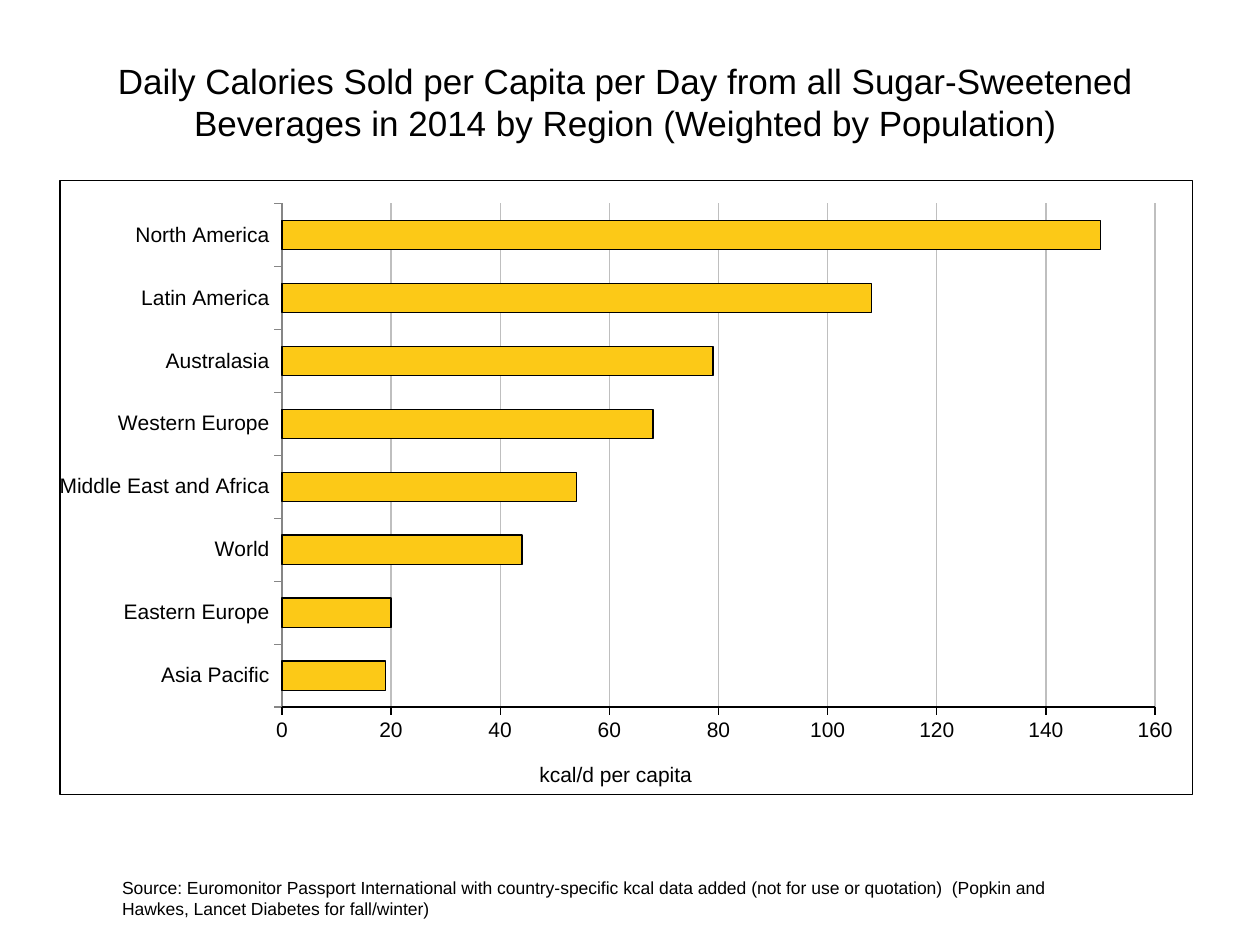
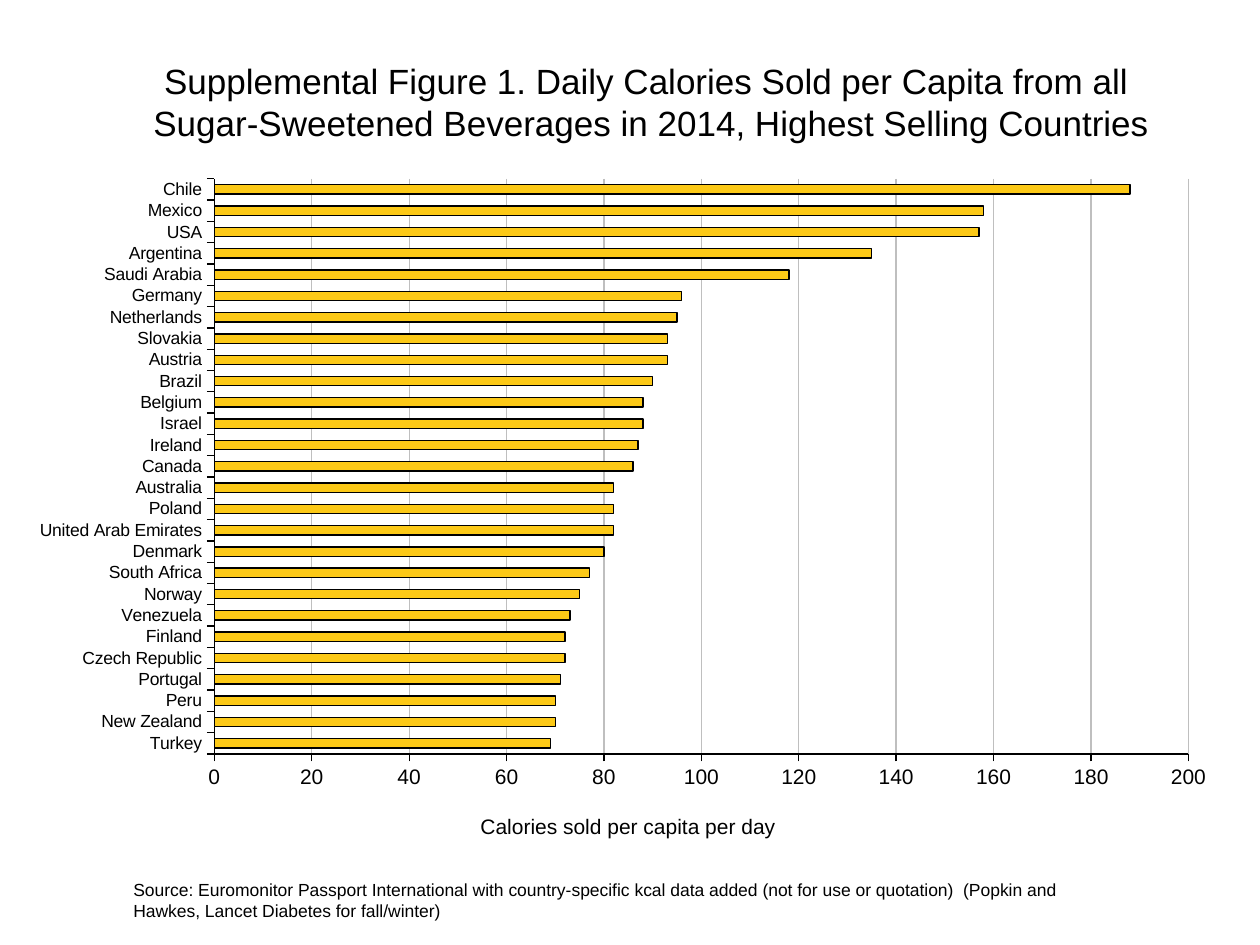
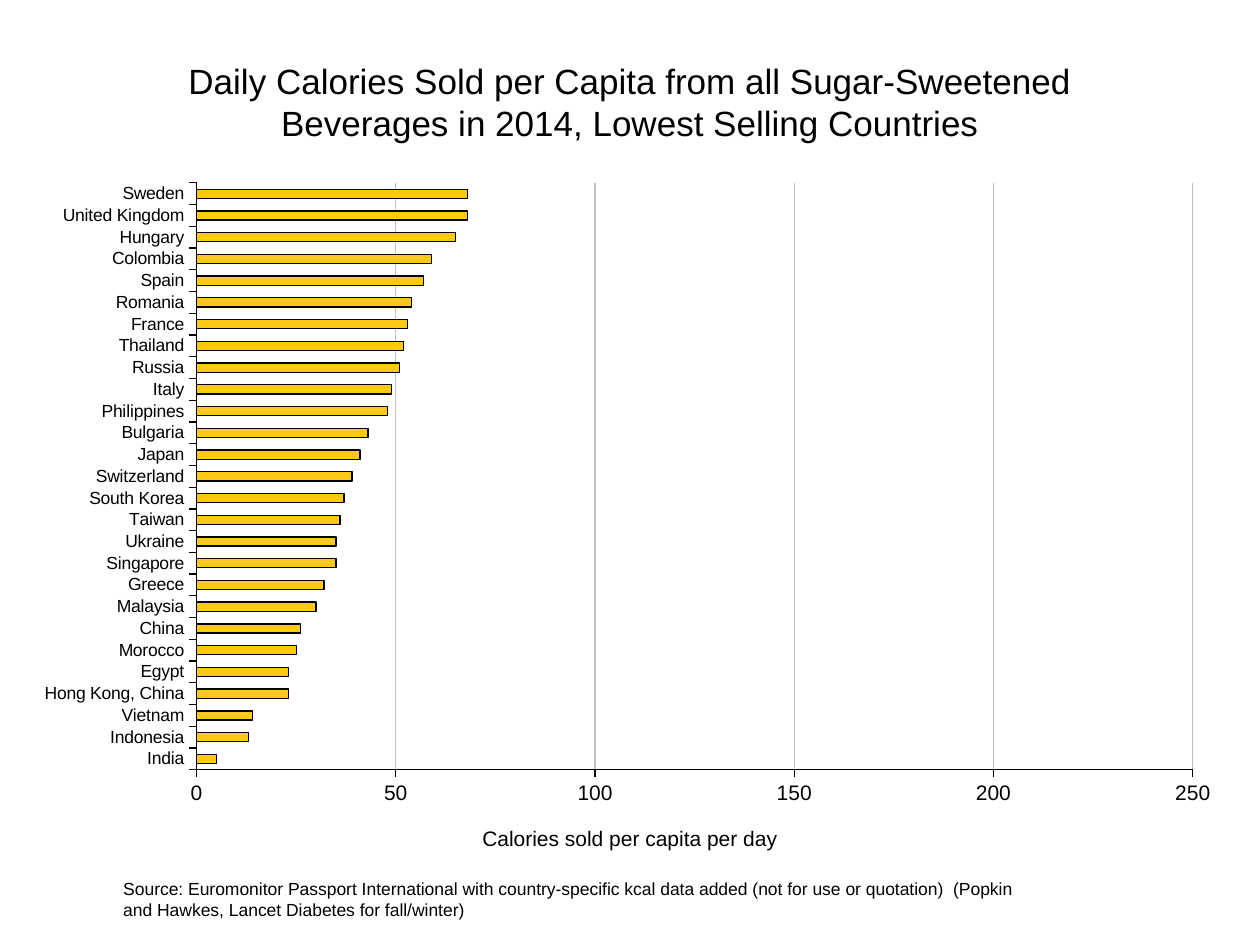
from lxml import etree
from pptx import Presentation
from pptx.chart.data import CategoryChartData
from pptx.dml.color import RGBColor
from pptx.enum.chart import XL_CHART_TYPE, XL_TICK_MARK
from pptx.enum.text import MSO_ANCHOR, MSO_AUTO_SIZE, PP_ALIGN
from pptx.oxml import parse_xml
from pptx.oxml.ns import nsdecls, qn
from pptx.util import Inches, Pt

CLUSTERED, STACKED = XL_CHART_TYPE.BAR_CLUSTERED, XL_CHART_TYPE.BAR_STACKED
TICK_OUT, TICK_NONE = XL_TICK_MARK.OUTSIDE, XL_TICK_MARK.NONE
TOP, FIT = MSO_ANCHOR.TOP, MSO_AUTO_SIZE.SHAPE_TO_FIT_TEXT
LEFT, CENTER = PP_ALIGN.LEFT, PP_ALIGN.CENTER

BLACK, GRAY, GRID, GOLD = "000000", "868686", "BFBFBF", "FCC917"
FONT = "Arial"
LINE_WIDTH = Pt(0.75)
SOURCE = (
    "Source: Euromonitor Passport International with country-specific kcal data added "
    "(not for use or quotation)  (Popkin and Hawkes, Lancet Diabetes for fall/winter)"
)

REGIONS = {
    "Asia Pacific": 19, "Eastern Europe": 20, "World": 44, "Middle East and Africa": 54,
    "Western Europe": 68, "Australasia": 79, "Latin America": 108, "North America": 150,
}
HIGHEST = {
    "Turkey": 69, "New Zealand": 70, "Peru": 70, "Portugal": 71, "Czech Republic": 72,
    "Finland": 72, "Venezuela": 73, "Norway": 75, "South Africa": 77, "Denmark": 80,
    "United Arab Emirates": 82, "Poland": 82, "Australia": 82, "Canada": 86, "Ireland": 87,
    "Israel": 88, "Belgium": 88, "Brazil": 90, "Austria": 93, "Slovakia": 93,
    "Netherlands": 95, "Germany": 96, "Saudi Arabia": 118, "Argentina": 135, "USA": 157,
    "Mexico": 158, "Chile": 188,
}
LOWEST = {
    "India": 5, "Indonesia": 13, "Vietnam": 14, "Hong Kong, China": 23, "Egypt": 23,
    "Morocco": 25, "China": 26, "Malaysia": 30, "Greece": 32, "Singapore": 35,
    "Ukraine": 35, "Taiwan": 36, "South Korea": 37, "Switzerland": 39, "Japan": 41,
    "Bulgaria": 43, "Philippines": 48, "Italy": 49, "Russia": 51, "Thailand": 52,
    "France": 53, "Romania": 54, "Spain": 57, "Colombia": 59, "Hungary": 65,
    "United Kingdom": 68, "Sweden": 68,
}

SLIDES = [
    {
        "title": "Daily Calories Sold per Capita per Day from all Sugar-Sweetened "
                 "Beverages in 2014 by Region (Weighted by Population)",
        "title_at": (0.62, 0.42, 8.69, 0.77), "source_at": (0.87, 6.91, 7.92, 0.44),
        "chart_at": (0.47, 1.43, 9, 4.88), "type": CLUSTERED, "data": REGIONS,
        "gap": 116, "overlap": 0, "max": 160, "step": 20, "format": "#,##0",
        "axis_title": "kcal/d per capita", "axis_title_at": (0.42, 0.94),
        "plot_at": (0.196, 0.037, 0.771, 0.821),
        "label_size": 12, "axis_color": GRAY, "border": True,
    },
    {
        "title": "Supplemental Figure 1. Daily Calories Sold per Capita from all \v"
                 "Sugar-Sweetened Beverages in 2014, Highest Selling Countries",
        "title_at": (1.11, 0.42, 8.12, 0.77), "source_at": (0.96, 6.93, 7.84, 0.44),
        "chart_at": (0.12, 1.31, 9.64, 5.5), "type": STACKED, "data": HIGHEST,
        "gap": 128, "overlap": 100, "max": 200, "step": 20, "format": "0",
        "axis_title": "Calories sold per capita per day", "axis_title_at": (0.38, 0.93),
        "plot_at": (0.164, 0.02, 0.802, 0.83),
        "label_size": 10, "axis_color": BLACK, "border": False,
    },
    {
        "title": "Daily Calories Sold per Capita from all Sugar-Sweetened "
                 "Beverages in 2014, Lowest Selling Countries",
        "title_at": (1.11, 0.42, 7.78, 0.77), "source_at": (0.88, 6.92, 7.33, 0.44),
        "chart_at": (0.29, 1.3, 9.48, 5.62), "type": STACKED, "data": LOWEST,
        "gap": 138, "overlap": 100, "max": 250, "step": 50, "format": "0",
        "axis_title": "Calories sold per capita per day", "axis_title_at": (0.37, 0.93),
        "plot_at": (0.134, 0.027, 0.834, 0.829),
        "label_size": 10, "axis_color": BLACK, "border": False,
    },
]


def color(hex_value):
    return RGBColor.from_string(hex_value)


def set_layout(parent, index, values):
    for old in parent.findall(qn("c:layout")):
        parent.remove(old)
    layout = parse_xml(f"<c:layout {nsdecls('c')}><c:manualLayout/></c:layout>")
    fields = {"xMode": "edge", "yMode": "edge"} | dict(zip("xywh", values))
    if len(values) == 4:
        fields = {"layoutTarget": "inner"} | fields
    for name, value in fields.items():
        etree.SubElement(layout[0], qn(f"c:{name}")).set("val", str(value))
    parent.insert(index, layout)


deck = Presentation()
deck.slide_width, deck.slide_height = Inches(10), Inches(7.5)

for spec_values in SLIDES:
    page = deck.slides.add_slide(deck.slide_layouts[5])

    data = CategoryChartData()
    data.categories = list(spec_values["data"])
    data.add_series("Series 1", list(spec_values["data"].values()))
    place = [Inches(length) for length in spec_values["chart_at"]]
    chart = page.shapes.add_chart(spec_values["type"], *place, data).chart
    chart.has_legend = chart.has_title = False

    value_axis, category_axis = chart.value_axis, chart.category_axis
    value_axis.minimum_scale = 0
    value_axis.maximum_scale = spec_values["max"]
    value_axis.major_unit = spec_values["step"]
    value_axis.has_major_gridlines = True
    value_axis.tick_labels.number_format = spec_values["format"]
    value_axis.tick_labels.number_format_is_linked = False
    for axis in (value_axis, category_axis):
        axis.major_tick_mark, axis.minor_tick_mark = TICK_OUT, TICK_NONE

    axis_title = value_axis.axis_title
    axis_title.text_frame.text = spec_values["axis_title"]
    title_span = axis_title.text_frame.paragraphs[0].runs[0]
    fonts = [
        (chart.font, 10),
        (value_axis.tick_labels.font, 12),
        (category_axis.tick_labels.font, spec_values["label_size"]),
        (title_span.font, 12),
    ]
    for font, size in fonts:
        for name, value in {"name": FONT, "size": Pt(size), "bold": False}.items():
            setattr(font, name, value)
        font.color.rgb = color(BLACK)

    plot = chart.plots[0]
    plot.gap_width, plot.overlap = spec_values["gap"], spec_values["overlap"]
    plot.vary_by_categories = False
    bars = plot.series[0]
    bars.format.fill.solid()
    bars.format.fill.fore_color.rgb = color(GOLD)
    lines = [
        (bars.format.line, BLACK),
        (value_axis.format.line, BLACK),
        (category_axis.format.line, spec_values["axis_color"]),
        (value_axis.major_gridlines.format.line, GRID),
    ]
    for line, line_color in lines:
        line.color.rgb, line.width = color(line_color), LINE_WIDTH

    chart_space = chart.element
    set_layout(chart_space.find(f".//{qn('c:plotArea')}"), 0, spec_values["plot_at"])
    set_layout(chart_space.find(f".//{qn('c:valAx')}/{qn('c:title')}"), 1,
               spec_values["axis_title_at"])
    outline = "<a:noFill/>"
    if spec_values["border"]:
        outline = f'<a:solidFill><a:srgbClr val="{BLACK}"/></a:solidFill>'
    chart_space.find(qn("c:txPr")).addprevious(parse_xml(
        f'<c:spPr {nsdecls("c", "a")}><a:noFill/>'
        f'<a:ln w="{LINE_WIDTH}">{outline}</a:ln></c:spPr>'
    ))

    source_place = [Inches(length) for length in spec_values["source_at"]]
    texts = [
        (page.shapes.title, "title_at", spec_values["title"], 20, CENTER),
        (page.shapes.add_textbox(*source_place), "source_at", SOURCE, 10, LEFT),
    ]
    for box, place_name, text, size, alignment in texts:
        for side, length in zip(("left", "top", "width", "height"), spec_values[place_name]):
            setattr(box, side, Inches(length))
        frame = box.text_frame
        frame_format = {"word_wrap": True, "auto_size": FIT, "vertical_anchor": TOP}
        for name, value in frame_format.items():
            setattr(frame, name, value)
        para = frame.paragraphs[0]
        para.text, para.alignment = text, alignment
        for span in para.runs:
            span.font.name, span.font.size = FONT, Pt(size)
            span.font.color.rgb = color(BLACK)

deck.save("out.pptx")
